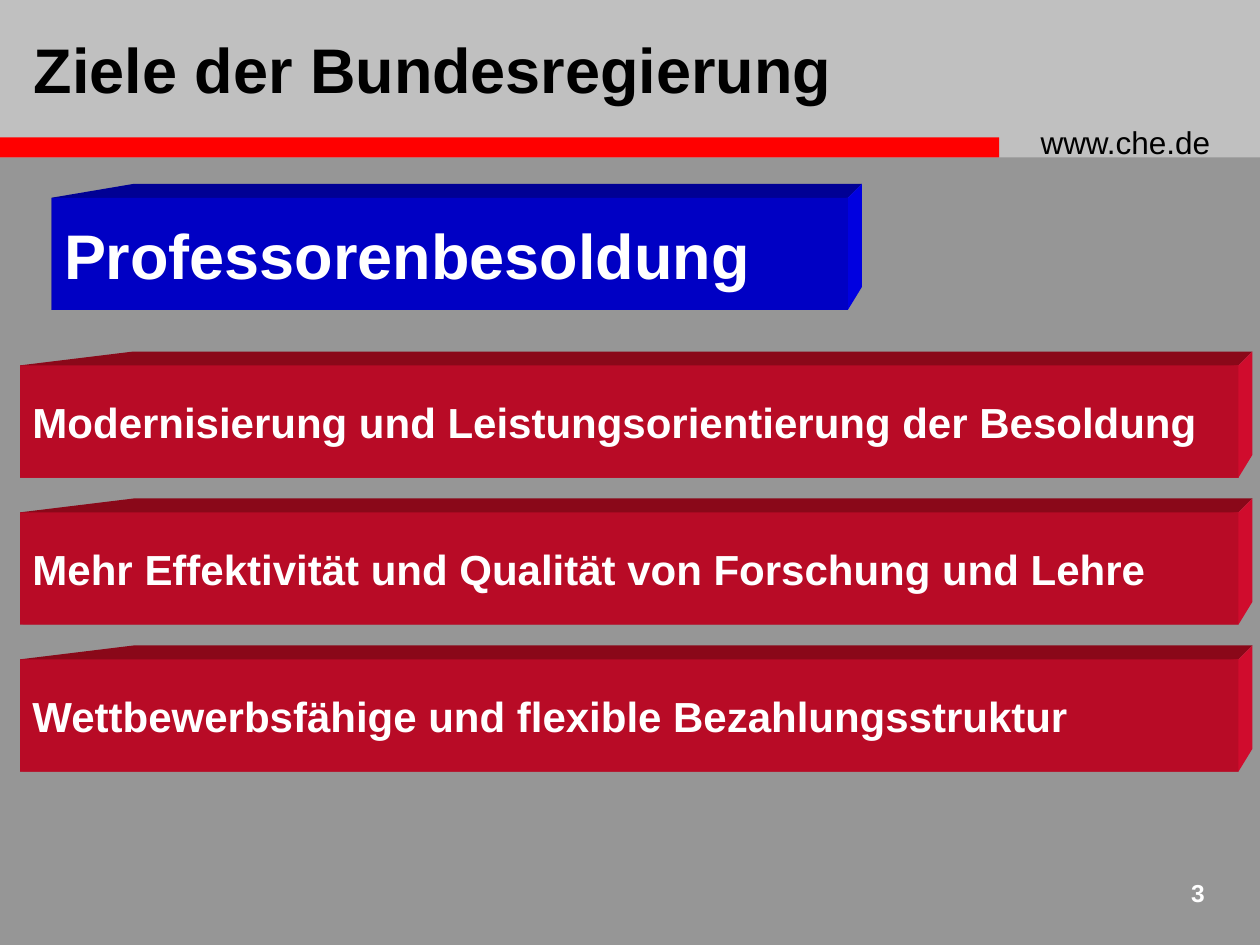
import pptx
import pptx.util
import pptx.dml.color
import pptx.enum.shapes
import pptx.enum.text
from dataclasses import dataclass

Inches = pptx.util.Inches
Align = pptx.enum.text.PP_ALIGN
Anchor = pptx.enum.text.MSO_ANCHOR


@dataclass
class Tone:
    front: str
    top: str
    side: str


@dataclass
class Block:
    text: str
    left: float
    top: float
    width: float
    size: int
    tone: Tone


@dataclass
class Label:
    text: str
    left: float
    top: float
    width: float
    height: float
    size: int
    color: str = "000000"
    bold: bool = True
    align: Align = Align.LEFT
    anchor: Anchor = Anchor.TOP


BLUE = Tone("0000C4", "000094", "0000E0")
RED = Tone("B80B26", "8A0819", "D00C2D")
HIGH = 0.89
DEPTH = 0.11
BACK = 1.06
RISE = 0.18

GOALS = [
    "Modernisierung und Leistungsorientierung der Besoldung",
    "Mehr Effektivität und Qualität von Forschung und Lehre",
    "Wettbewerbsfähige und flexible Bezahlungsstruktur",
]
BLOCKS = [Block("Professorenbesoldung", 0.41, 1.57, 6.32, 36, BLUE)] + [
    Block(goal, 0.16, 2.9 + 7 / 6 * row, 9.67, 24, RED)
    for row, goal in enumerate(GOALS)
]
LABELS = [
    Label("www.che.de", 8.16, 0.93, 1.75, 0.4, 18, bold=False),
    Label("3", 9.08, 6.92, 0.58, 0.42, 14, "FFFFFF", align=Align.RIGHT),
    Label("Ziele der Bundesregierung", 0.17, 0, 8.08, 1.08, 36,
          anchor=Anchor.MIDDLE),
]


def rgb(code: str) -> pptx.dml.color.RGBColor:
    return pptx.dml.color.RGBColor.from_string(code)


def paint(shape, color: str) -> None:
    shape.shadow.inherit = False
    shape.fill.solid()
    shape.fill.fore_color.rgb = rgb(color)
    shape.line.fill.background()


def add_rect(slide, left: float, top: float, width: float, height: float,
             color: str):
    shape = slide.shapes.add_shape(
        pptx.enum.shapes.MSO_SHAPE.RECTANGLE,
        Inches(left), Inches(top), Inches(width), Inches(height))
    paint(shape, color)
    return shape


def add_face(slide, points: list, color: str) -> None:
    start, *rest = [(Inches(x), Inches(y)) for x, y in points]
    pen = slide.shapes.build_freeform(*start)
    pen.add_line_segments(rest, close=True)
    paint(pen.convert_to_shape(), color)


def write(shape, text: str, size: int, color: str, bold: bool = True,
          align: Align = Align.LEFT, anchor: Anchor = Anchor.MIDDLE,
          wrap: bool = False) -> None:
    frame = shape.text_frame
    frame.word_wrap = wrap
    frame.vertical_anchor = anchor
    para = frame.paragraphs[0]
    para.text = text
    para.alignment = align
    font = para.font
    font.name = "Arial"
    font.size = pptx.util.Pt(size)
    font.bold = bold
    font.color.rgb = rgb(color)


def add_block(slide, block: Block) -> None:
    left, top = block.left, block.top
    right, base = left + block.width, top + HIGH
    edge, roof = right + DEPTH, top - DEPTH
    add_face(slide, [(left, top), (BACK, roof), (edge, roof), (right, top),
                     (right, base), (left, base)], block.tone.top)
    add_face(slide, [(right, top), (edge, roof), (edge, base - RISE),
                     (right, base), (left, base)], block.tone.side)
    front = add_rect(slide, left, top, block.width, HIGH, block.tone.front)
    write(front, block.text, block.size, "FFFFFF")


def add_label(slide, label: Label) -> None:
    box = slide.shapes.add_textbox(
        Inches(label.left), Inches(label.top),
        Inches(label.width), Inches(label.height))
    write(box, label.text, label.size, label.color, label.bold, label.align,
          label.anchor, True)


def main() -> None:
    deck = pptx.Presentation()
    deck.slide_width, deck.slide_height = Inches(10), Inches(7.5)
    slide = deck.slides.add_slide(deck.slide_layouts[6])
    slide.background.fill.solid()
    slide.background.fill.fore_color.rgb = rgb("969696")
    add_rect(slide, 0, 0, 10, 1.25, "C0C0C0")
    add_rect(slide, 0, 1.09, 7.93, 0.16, "FF0000")
    for label in LABELS:
        add_label(slide, label)
    for block in BLOCKS:
        add_block(slide, block)
    deck.save("out.pptx")


if __name__ == "__main__":
    main()
